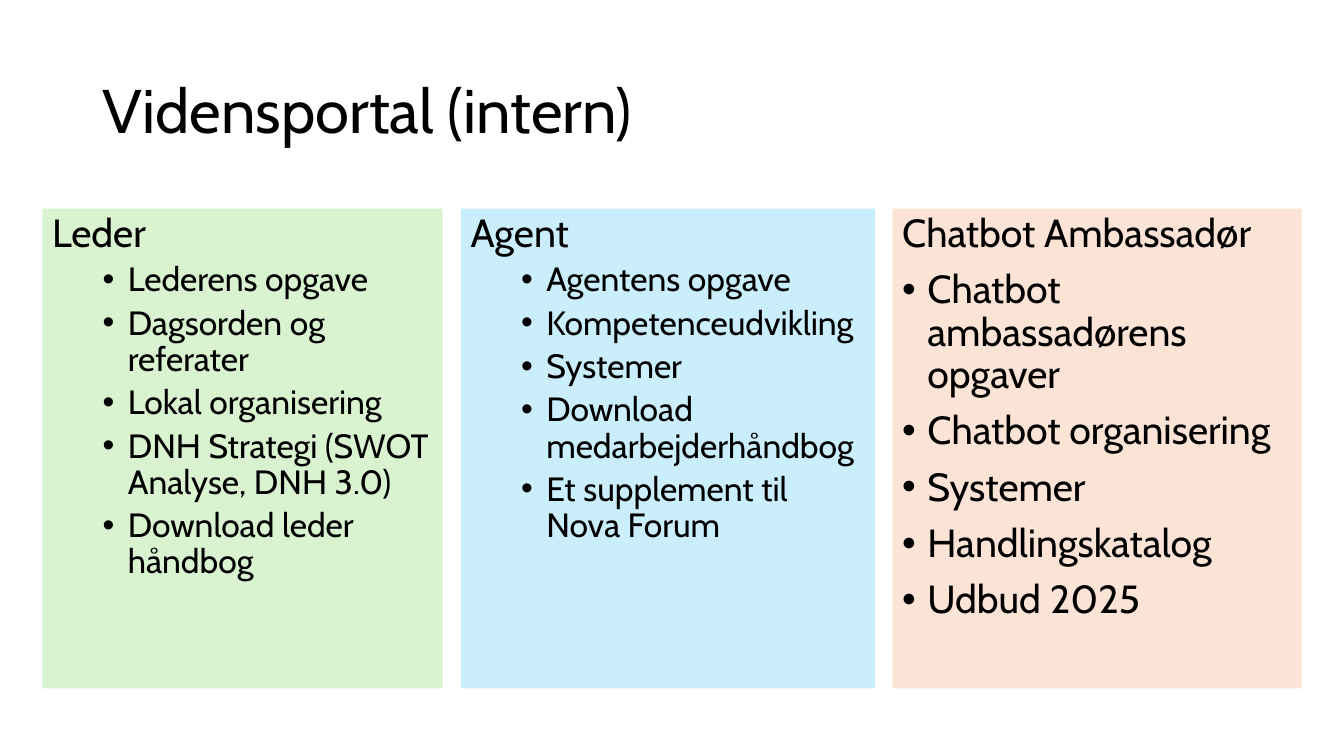
from lxml.etree import SubElement
from pptx import Presentation
from pptx.dml.color import RGBColor
from pptx.enum.shapes import MSO_SHAPE as Shape
from pptx.enum.text import MSO_ANCHOR as Anchor, PP_ALIGN as Align
from pptx.oxml.ns import qn
from pptx.util import Pt

EMU_PER_PX = 9144  # 100 px to the inch

PANEL_TOP, PANEL_HEIGHT = 207, 476
HEADING_SIZE = 28
NESTED = {"level": 1, "size": 24, "indent": 75, "before": 5}
FLAT = {"level": 0, "size": 28, "indent": 25, "before": 10}

# left, width, fill, heading, bullet style, bullets
PANELS = [
    (42, 397, "D9F2D0", "Leder", NESTED, [
        "Lederens opgave",
        "Dagsorden og referater",
        "Lokal organisering",
        "DNH Strategi (SWOT Analyse, DNH 3.0)",
        "Download leder håndbog",
    ]),
    (457, 411, "CAEEFB", "Agent", NESTED, [
        "Agentens opgave",
        "Kompetenceudvikling",
        "Systemer",
        "Download medarbejderhåndbog",
        "Et supplement til Nova Forum",
    ]),
    (885, 406, "FBE3D6", "Chatbot Ambassadør", FLAT, [
        "Chatbot ambassadørens opgaver",
        "Chatbot organisering",
        "Systemer",
        "Handlingskatalog",
        "Udbud 2025",
    ]),
]


def px(length):
    return length * EMU_PER_PX


def color(hex_value):
    return RGBColor.from_string(hex_value)


class SlideBuilder:
    """Holds the text style and the slide being filled."""

    font = "Cabin"
    ink = "000000"
    bullet_hang = 25

    def __init__(self, slide):
        self.slide = slide

    def add_text(self, para, text, size, before=0):
        para_format = {"alignment": Align.LEFT, "line_spacing": 0.9,
                       "space_before": Pt(before)}
        for name, value in para_format.items():
            setattr(para, name, value)
        span = para.add_run()
        span.text = text
        font_format = {"name": self.font, "size": Pt(size)}
        for name, value in font_format.items():
            setattr(span.font, name, value)
        span.font.color.rgb = color(self.ink)

    def title(self, text, left, top, width, height):
        box = self.slide.shapes.add_textbox(
            px(left), px(top), px(width), px(height))
        frame = box.text_frame
        frame.word_wrap = True
        frame.vertical_anchor = Anchor.MIDDLE
        self.add_text(frame.paragraphs[0], text, 44)

    def bullet(self, frame, text, level, size, indent, before):
        para = frame.add_paragraph()
        para.level = level
        self.add_text(para, text, size, before)
        properties = para._p.get_or_add_pPr()
        properties.set("marL", str(px(indent)))
        properties.set("indent", str(px(-self.bullet_hang)))
        SubElement(properties, qn("a:buFont"), typeface="Arial")
        SubElement(properties, qn("a:buChar"), char="•")

    def panel(self, left, width, fill, heading, style, bullets):
        box = self.slide.shapes.add_shape(
            Shape.RECTANGLE, px(left), px(PANEL_TOP), px(width), px(PANEL_HEIGHT))
        box.shadow.inherit = False
        box.fill.solid()
        box.fill.fore_color.rgb = color(fill)
        box.line.fill.background()
        frame = box.text_frame
        frame.word_wrap = True
        frame.vertical_anchor = Anchor.TOP
        self.add_text(frame.paragraphs[0], heading, HEADING_SIZE, 10)
        for text in bullets:
            self.bullet(frame, text, **style)


def main():
    deck = Presentation()
    deck.slide_width, deck.slide_height = px(1333), px(750)
    page = SlideBuilder(deck.slides.add_slide(deck.slide_layouts[6]))
    page.title("Vidensportal (intern)", 92, 40, 1150, 145)
    for panel in PANELS:
        page.panel(*panel)
    deck.save("out.pptx")


if __name__ == "__main__":
    main()
